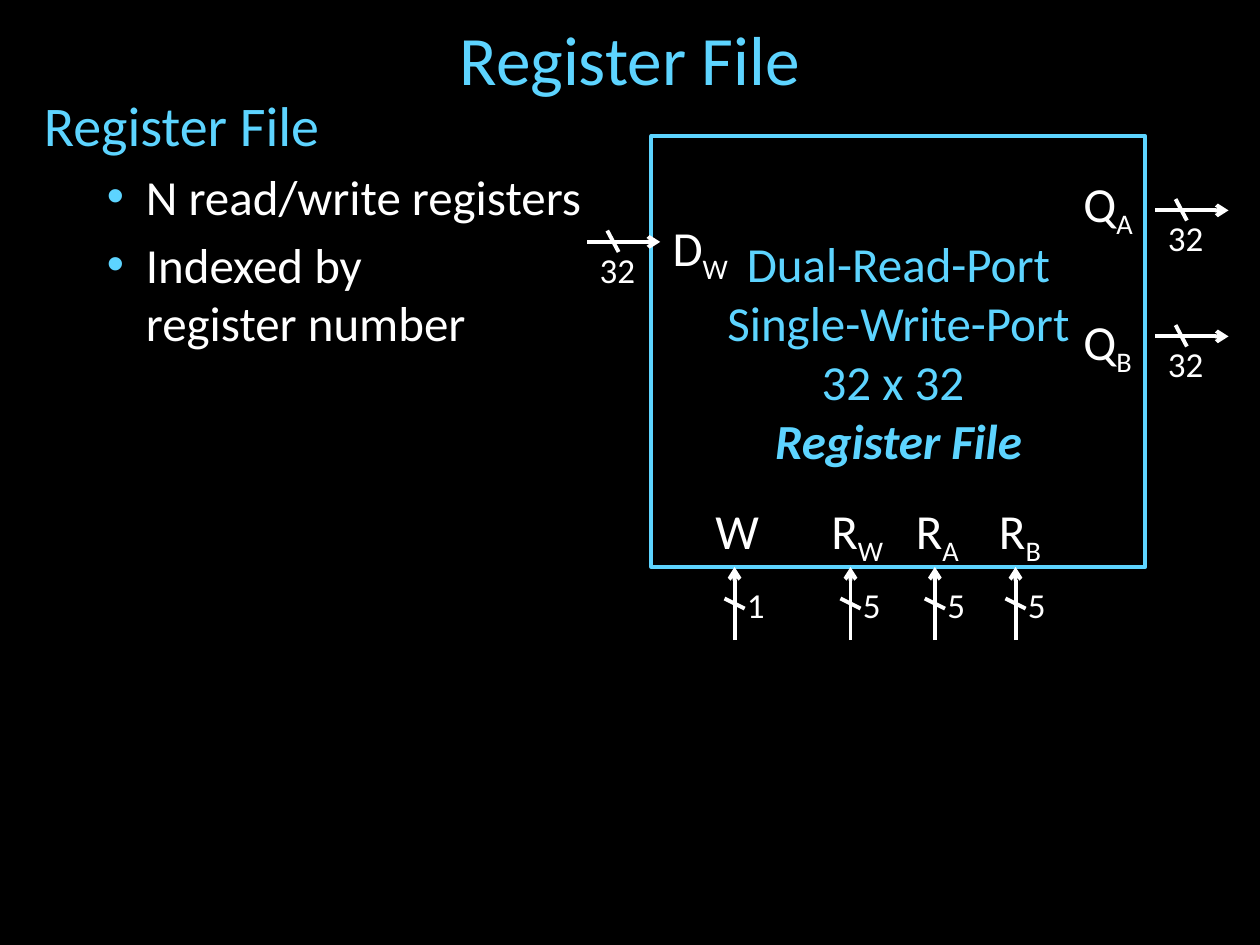
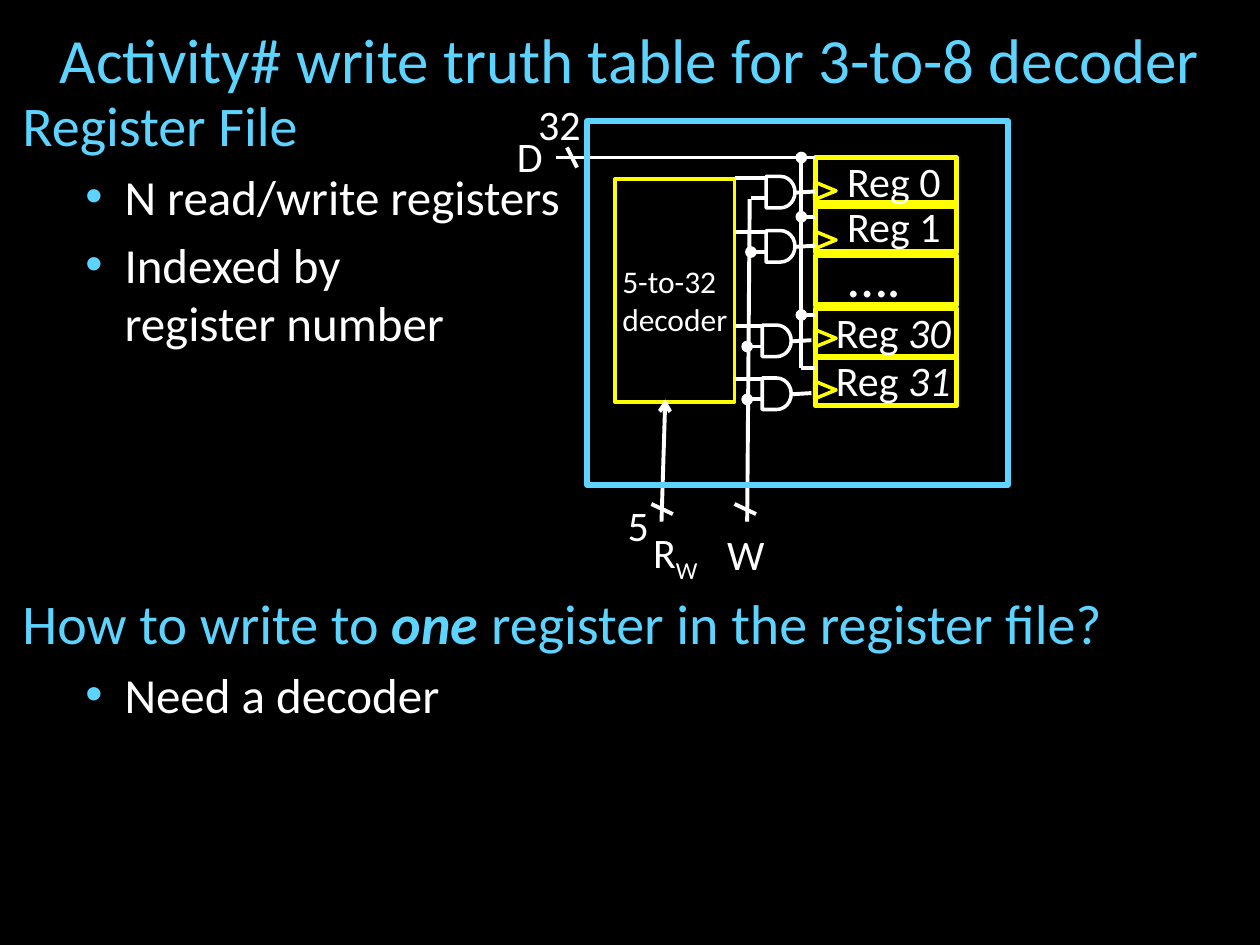
from lxml.etree import SubElement
from pptx import Presentation
from pptx.dml.color import RGBColor
from pptx.enum.shapes import MSO_CONNECTOR, MSO_SHAPE
from pptx.enum.text import MSO_ANCHOR, MSO_AUTO_SIZE, PP_ALIGN
from pptx.oxml.ns import qn
from pptx.util import Inches, Pt

COLORS = {"background": "000000", "accent": "5DD4FF", "text": "FFFFFF", "register": "FFFF00"}

CENTERED = {"alignment": PP_ALIGN.CENTER}
LOOSE = {"alignment": PP_ALIGN.CENTER, "line_spacing": 1.16}
STYLES = {
    "title": (39.6, "accent", CENTERED),
    "long title": (36, "accent", CENTERED),
    "heading": (32, "accent", {"space_before": Pt(5)}),
    "lower heading": (32, "accent", {"space_before": Pt(135)}),
    "bullet": (28, "text", {"space_before": Pt(5)}),
    "block": (28, "accent", CENTERED),
    "port": (28, "text", {}),
    "width": (20, "text", {}),
    "decoder": (18, "text", {}),
    "signal": (24, "text", LOOSE),
    "dots": (32, "text", LOOSE),
}
MARKS = {"": {}, "italic": {"italic": True}, "strong": {"bold": True, "italic": True}, "sub": {}}
WRAPPED = {"word_wrap": True}
MIDDLE = {"word_wrap": True, "vertical_anchor": MSO_ANCHOR.MIDDLE}
FITTED = {"word_wrap": False, "auto_size": MSO_AUTO_SIZE.SHAPE_TO_FIT_TEXT}
TIGHT = FITTED | {f"margin_{side}": 0 for side in ("left", "right", "top", "bottom")}


def add_box(slide, place, paragraphs=(), frame_format=FITTED, kind=None, outline=None, weight=2):
    lengths = [Inches(value) for value in place]
    if kind is None:
        shape = slide.shapes.add_textbox(*lengths)
    else:
        shape = slide.shapes.add_shape(kind, *lengths)
        shape.shadow.inherit = False
        shape.fill.background()
        shape.line.color.rgb = RGBColor.from_string(COLORS[outline])
        shape.line.width = Pt(weight)
    if paragraphs:
        for name, value in frame_format.items():
            setattr(shape.text_frame, name, value)
    for index, (style, *runs) in enumerate(paragraphs):
        size, color, paragraph_format = STYLES[style]
        frame = shape.text_frame
        paragraph = frame.add_paragraph() if index else frame.paragraphs[0]
        for name, value in paragraph_format.items():
            setattr(paragraph, name, value)
        if style == "bullet":
            properties = paragraph._p.get_or_add_pPr()
            properties.set("marL", str(Inches(0.81)))
            properties.set("indent", str(Inches(-0.31)))
            bullet_color = SubElement(properties, qn("a:buClr"))
            SubElement(bullet_color, qn("a:srgbClr"), val=COLORS["accent"])
            SubElement(properties, qn("a:buFont"), typeface="Arial")
            SubElement(properties, qn("a:buChar"), char="•")
        for text, mark in runs:
            for number, line_text in enumerate(text.split("\n")):
                if number:
                    paragraph.add_line_break()
                run = paragraph.add_run()
                run.text = line_text
                for name, value in ({"name": "Calibri", "size": Pt(size)} | MARKS[mark]).items():
                    setattr(run.font, name, value)
                run.font.color.rgb = RGBColor.from_string(COLORS[color])
                if mark == "sub":
                    run._r.get_or_add_rPr().set("baseline", "-25000")
    return shape


def add_line(slide, start, end, head=None, tail=None):
    points = [Inches(value) for value in (*start, *end)]
    connector = slide.shapes.add_connector(MSO_CONNECTOR.STRAIGHT, *points)
    connector.line.color.rgb = RGBColor.from_string(COLORS["text"])
    connector.line.width = Pt(2.25)
    for tag, end_type in (("a:headEnd", head), ("a:tailEnd", tail)):
        if end_type:
            SubElement(connector.line._get_or_add_ln(), qn(tag), type=end_type)
    SubElement(connector._element.spPr, qn("a:effectLst"))


presentation = Presentation()
presentation.slide_width = Inches(10)
presentation.slide_height = Inches(7.5)

register_notes = [
    ("heading", ("Register File", "")),
    ("bullet", ("N read/write registers", "")),
    ("bullet", ("Indexed by \nregister number", "")),
]
write_notes = [
    ("lower heading", ("How to write to ", ""), ("one", "strong"),
     (" register in the register file?", "")),
    ("bullet", ("Need a decoder", "")),
]
pages = [
    ("title", "Register File", (0.25, 0.67, 5.58, 6.75), register_notes),
    ("long title", "Activity# write truth table for 3-to-8 decoder",
     (0.08, 0.67, 9.42, 6.75), register_notes + write_notes),
]
slides = []
for title_style, title, body_place, notes in pages:
    slide = presentation.slides.add_slide(presentation.slide_layouts[6])
    slide.background.fill.solid()
    slide.background.fill.fore_color.rgb = RGBColor.from_string(COLORS["background"])
    add_box(slide, (0.25, 0.17, 9.5, 0.58), [(title_style, (title, ""))], MIDDLE)
    add_box(slide, body_place, notes, WRAPPED)
    slides.append(slide)
ports_slide, decoder_slide = slides

block_text = [
    ("block", ("Dual-Read-Port\nSingle-Write-Port", "")),
    ("block", ("32 x 32 \n", ""), ("Register File", "strong")),
]
add_box(ports_slide, (5.17, 1.08, 3.92, 3.42), block_text, MIDDLE,
        MSO_SHAPE.RECTANGLE, "accent", 2.25)

ports = [
    ("Q", "A", 8.5, 1.33, 0.62),
    ("Q", "B", 8.5, 2.42, 0.62),
    ("D", "W", 5.24, 1.68, 0.67),
    ("R", "W", 6.5, 3.92, 0.65),
    ("R", "A", 7.17, 3.92, 0.57),
    ("R", "B", 7.83, 3.92, 0.56),
    ("W", "", 5.58, 3.92, 0.55),
]
for letter, index, left, top, width in ports:
    runs = [(letter, "")] + ([(index, "sub")] if index else [])
    add_box(ports_slide, (left, top, width, 0.57), [("port", *runs)])

for left, y in ((4.66, 1.92), (9.17, 1.67), (9.17, 2.67)):
    add_line(ports_slide, (left, y), (left + 0.58, y), tail="arrow")
    add_line(ports_slide, (left + 0.16, y - 0.09), (left + 0.25, y + 0.08))
    add_box(ports_slide, (left, y, 0.49, 0.44), [("width", ("32", ""))])

for x, bits in ((5.83, "1"), (6.75, "5"), (7.42, "5"), (8.06, "5")):
    add_line(ports_slide, (x, 5.08), (x, 4.5), tail="arrow")
    add_line(ports_slide, (x - 0.08, 4.75), (x + 0.08, 4.83))
    add_box(ports_slide, (x, 4.58, 0.34, 0.44), [("width", (bits, ""))])

registers = [
    (1.25, "0", ""),
    (1.61, "1", ""),
    (2.45, "30", "italic"),
    (2.83, "31", "italic"),
]
for top in (1.25, 1.61, 2.03, 2.45, 2.83):
    add_box(decoder_slide, (6.47, top, 1.12, 0.39), kind=MSO_SHAPE.RECTANGLE,
            outline="register", weight=3)
for top, number, mark in registers:
    left, width = (6.63, 0.92) if mark else (6.72, 0.75)
    add_box(decoder_slide, (left, top - 0.08, width, 0.44),
            [("signal", ("Reg ", ""), (number, mark))], TIGHT)
add_box(decoder_slide, (6.73, 1.83, 0.42, 0.59), [("dots", ("….", ""))], TIGHT)

for top in (1.43, 1.82, 2.6, 3.01):
    clock = add_box(decoder_slide, (6.48, top, 0.14, 0.17),
                    kind=MSO_SHAPE.ISOSCELES_TRIANGLE, outline="register")
    clock.rotation = 90

add_box(decoder_slide, (4.88, 1.42, 0.95, 1.77), kind=MSO_SHAPE.RECTANGLE, outline="register")
add_box(decoder_slide, (4.84, 2.03, 1.05, 0.71),
        [("decoder", ("5-to-32", "")), ("decoder", ("decoder", ""))])

gates = [(6.08, 1.4, None), (6.08, 1.83, "oval"), (6.05, 2.58, "oval"), (6.05, 3, "oval")]
for left, top, joint in gates:
    add_box(decoder_slide, (left, top, 0.23, 0.25), kind=MSO_SHAPE.FLOWCHART_DELAY, outline="text")
    add_line(decoder_slide, (left + 0.22, top + 0.13), (left + 0.39, top + 0.12))
    add_line(decoder_slide, (5.83, top + 0.01), (left, top + 0.01))
    add_line(decoder_slide, (left, top + 0.17), (left - 0.12, top + 0.17), tail=joint)

add_line(decoder_slide, (5.95, 1.58), (5.93, 4.14))
add_line(decoder_slide, (5.25, 4.14), (5.28, 3.17), tail="arrow")
for x in (5.17, 5.83):
    add_line(decoder_slide, (x, 4), (x + 0.17, 4.08))

add_line(decoder_slide, (6.47, 1.25), (4.41, 1.25))
add_line(decoder_slide, (4.5, 1.17), (4.58, 1.33))
add_line(decoder_slide, (6.36, 1.25), (6.36, 2.92), head="oval")
for y, joint in ((1.72, "oval"), (2.5, "oval"), (2.92, None)):
    add_line(decoder_slide, (6.47, y), (6.36, y), tail=joint)

add_box(decoder_slide, (4.66, 0.96, 3.34, 2.89), kind=MSO_SHAPE.RECTANGLE,
        outline="accent", weight=3)

signals = [
    ((4.88, 3.85, 0.37, 0.57), [("5", "")]),
    ((5.07, 4.06, 0.58, 0.54), [("R", ""), ("W", "sub")]),
    ((5.67, 4.08, 0.5, 0.57), [("W", "")]),
    ((4, 0.92, 0.41, 0.57), [("D", "")]),
    ((4.17, 0.67, 0.54, 0.57), [("32", "")]),
]
for place, runs in signals:
    add_box(decoder_slide, place, [("signal", *runs)])

presentation.save("out.pptx")
